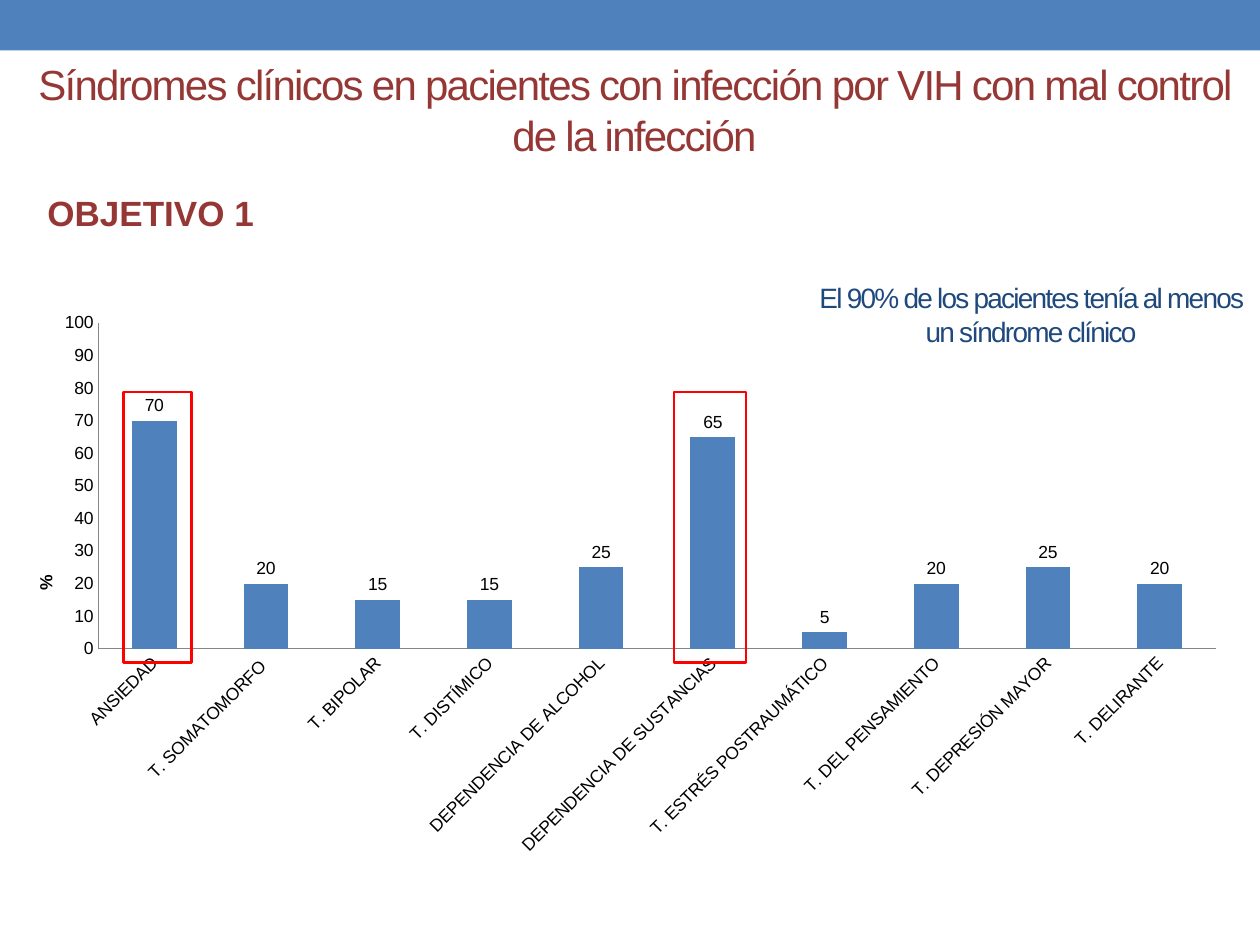
"""Build a slide charting clinical syndromes in patients with HIV."""
from lxml import etree
from pptx import Presentation
from pptx.chart.data import CategoryChartData
from pptx.dml.color import RGBColor
from pptx.enum.chart import XL_CHART_TYPE, XL_LABEL_POSITION, XL_TICK_MARK
from pptx.enum.shapes import MSO_SHAPE
from pptx.enum.text import MSO_ANCHOR, PP_ALIGN
from pptx.oxml.ns import qn
from pptx.util import Cm, Pt

RECT = MSO_SHAPE.RECTANGLE
COLUMN = XL_CHART_TYPE.COLUMN_CLUSTERED
OUTER = XL_LABEL_POSITION.OUTSIDE_END
NO_TICK = XL_TICK_MARK.NONE
TOP, MIDDLE = MSO_ANCHOR.TOP, MSO_ANCHOR.MIDDLE
LEFT, CENTER = PP_ALIGN.LEFT, PP_ALIGN.CENTER

RATES = {
    "ANSIEDAD": 70,
    "T. SOMATOMORFO ": 20,
    "T. BIPOLAR": 15,
    "T. DISTÍMICO": 15,
    "DEPENDENCIA DE ALCOHOL": 25,
    "DEPENDENCIA DE SUSTANCIAS": 65,
    "T. ESTRÉS POSTRAUMÁTICO": 5,
    "T. DEL PENSAMIENTO": 20,
    "T. DEPRESIÓN MAYOR": 25,
    "T. DELIRANTE": 20,
}
THEME = {
    "font": "Arial", "blue": "4F81BD", "red": "FF0000", "wine": "953735",
    "navy": "1F497D", "black": "000000", "gray": "868686",
    "title": 24, "head": 20, "note": 16, "chart": 10,
}
TEXTS = [
    (" OBJETIVO 1", (0.51, 3.73, 5.21, 1.12), "head", "wine", True, LEFT, TOP, 0),
    ("Síndromes clínicos en pacientes con infección por VIH con mal control de la infección",
     (0.51, 0.61, 24.56, 3.18), "title", "wine", False, CENTER, MIDDLE, -100),
    ("El 90% de los pacientes tenía al menos un síndrome clínico",
     (16.1, 4.75, 9.37, 3.18), "note", "navy", False, CENTER, MIDDLE, -100),
]
BAND = (0, 0, 25.4, 1.02)
CHART = (0.51, 6.05, 24.56, 11.56)
PLOT = {"x": 0.06, "y": 0.04, "w": 0.917, "h": 0.568}
UNIT = {"x": 0.005, "y": 0.475}
FRAMES = [(13.59, 7.9, 1.45, 5.46), (2.49, 7.9, 1.37, 5.46)]


def tint(name):
    return RGBColor.from_string(THEME[name])


def place(box):
    return [Cm(part) for part in box]


def style(font, size, color, bold=False):
    font.name, font.size, font.bold = THEME["font"], Pt(THEME[size]), bold
    font.color.rgb = tint(color)


def add_rect(slide, box, fill=None, line=None):
    shape = slide.shapes.add_shape(RECT, *place(box))
    shape.shadow.inherit = False
    if fill:
        shape.fill.solid()
        shape.fill.fore_color.rgb = tint(fill)
    else:
        shape.fill.background()
    if line:
        shape.line.color.rgb = tint(line)
        shape.line.width = Pt(1.5)
    else:
        shape.line.fill.background()


def add_text(slide, text, box, size, color, bold, align, anchor, space):
    frame = slide.shapes.add_textbox(*place(box)).text_frame
    frame.word_wrap, frame.vertical_anchor = True, anchor
    frame.text = text
    line = frame.paragraphs[0]
    line.alignment = align
    run = line.runs[0]
    style(run.font, size, color, bold)
    if space:
        run.font._element.set("spc", str(space))


def set_layout(item, spots, inner=False):
    for old in item.findall(qn("c:layout")):
        item.remove(old)
    layout = etree.Element(qn("c:layout"))
    manual = etree.SubElement(layout, qn("c:manualLayout"))
    pairs = [("layoutTarget", "inner")] if inner else []
    pairs += [("xMode", "edge"), ("yMode", "edge"), *spots.items()]
    for tag, value in pairs:
        etree.SubElement(manual, qn(f"c:{tag}")).set("val", str(value))
    text = item.find(qn("c:tx"))
    if text is None:
        item.insert(0, layout)
    else:
        text.addnext(layout)


def add_chart(slide):
    data = CategoryChartData()
    data.categories = list(RATES)
    data.add_series("Series 1", list(RATES.values()))
    chart = slide.shapes.add_chart(COLUMN, *place(CHART), data).chart
    chart.has_legend = chart.has_title = False
    style(chart.font, "chart", "black")
    for axis in (chart.category_axis, chart.value_axis):
        axis.has_major_gridlines = False
        axis.major_tick_mark = axis.minor_tick_mark = NO_TICK
        axis.format.line.color.rgb = tint("gray")
        style(axis.tick_labels.font, "chart", "black")
    names = chart.category_axis._element.find(qn("c:txPr"))
    names.find(qn("a:bodyPr")).set("rot", "-2700000")
    scale = chart.value_axis
    scale.minimum_scale, scale.maximum_scale, scale.major_unit = 0, 100, 10
    title = scale.axis_title
    title.text_frame.text = "%"
    title.text_frame._txBody.bodyPr.set("rot", "-5400000")
    style(title.text_frame.paragraphs[0].runs[0].font, "chart", "black", True)
    set_layout(title._element, UNIT)
    plot = chart.plots[0]
    set_layout(plot._element.getparent(), PLOT, True)
    plot.gap_width, plot.vary_by_categories = 150, False
    plot.has_data_labels = True
    labels = plot.data_labels
    labels.show_value, labels.position = True, OUTER
    style(labels.font, "chart", "black")
    fill = plot.series[0].format.fill
    fill.solid()
    fill.fore_color.rgb = tint("blue")


def main():
    deck = Presentation()
    deck.slide_width, deck.slide_height = Cm(25.4), Cm(19.05)
    slide = deck.slides.add_slide(deck.slide_layouts[6])
    add_rect(slide, BAND, fill="blue")
    add_chart(slide)
    for box in FRAMES:
        add_rect(slide, box, line="red")
    for item in TEXTS:
        add_text(slide, *item)
    deck.save("out.pptx")


if __name__ == "__main__":
    main()
